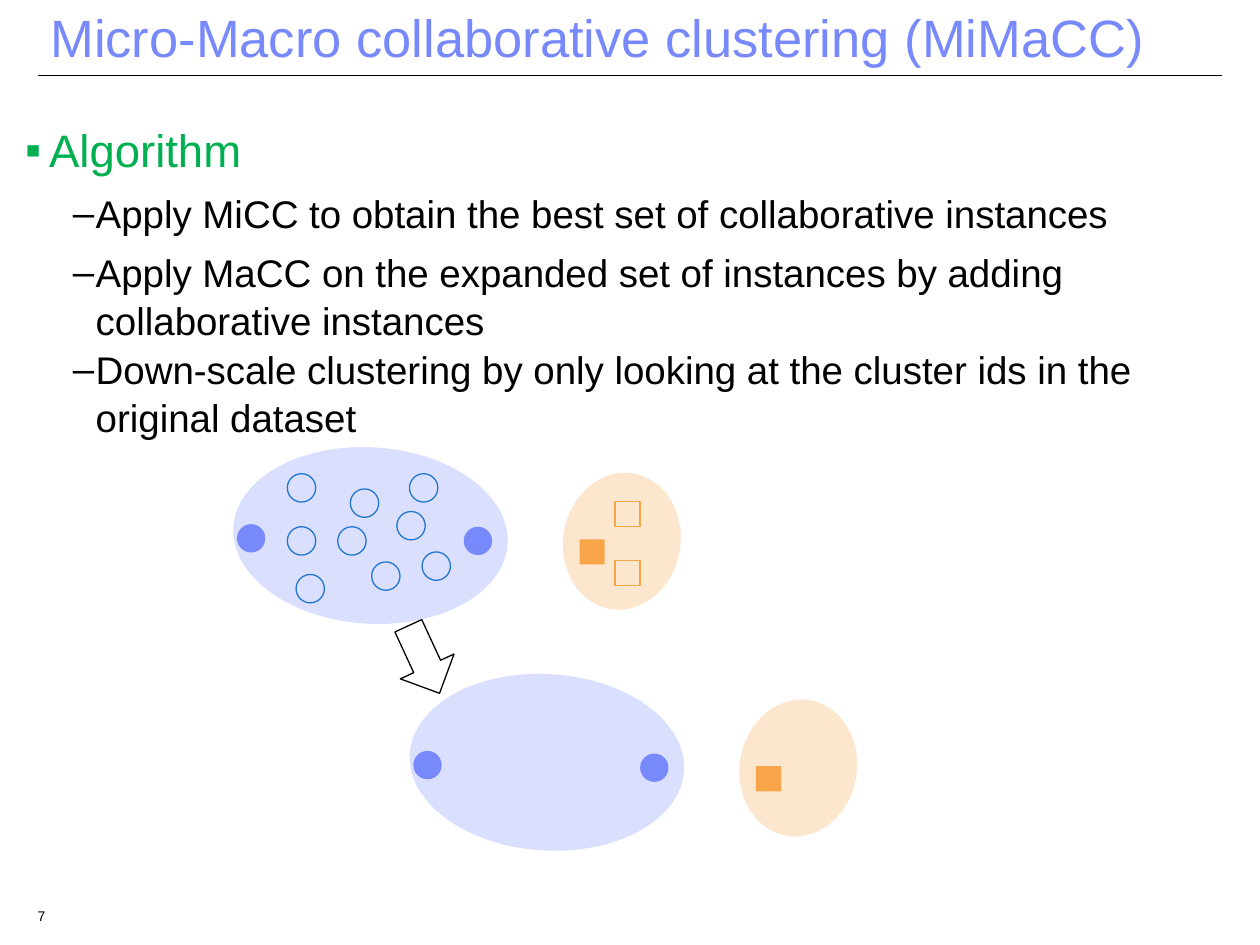
from lxml import etree
from pptx import Presentation
from pptx import util as u
from pptx.dml import color as col
from pptx.enum import shapes as sh, text as tx
from pptx.oxml import ns

Pt = u.Pt
HUES = {"blue": "7889FB", "orange": "F8A54A", "rim": "0070C0",
        "green": "00B050", "black": "000000"}
OVAL, RECT = sh.MSO_SHAPE.OVAL, sh.MSO_SHAPE.RECTANGLE
DOT, TILE = 16.2, 14.4

POINTS = [
    "Apply MiCC to obtain the best set of collaborative instances",
    "Apply MaCC on the expanded set of instances by adding collaborative instances",
    "Down-scale clustering by only looking at the cluster ids in the original dataset",
]
SOLID = [(OVAL, "blue", DOT, [(2.2, 43.9), (131.8, 45.4)]),
         (RECT, "orange", TILE, [(198, 52.6)])]
HOLLOW = [(OVAL, "rim", DOT, [(31, 15.1), (59.8, 45.4), (67, 23.8), (31, 45.4),
                              (79.2, 65.5), (93.6, 36.7), (100.8, 15.1),
                              (108, 59.8), (36, 72.7)]),
          (RECT, "orange", TILE, [(218.2, 64.8), (218.2, 31)])]
FIELDS = [("blue", (0, 0, 157, 100.8), 3.6),
          ("orange", (182.9, 20.2, 78.5, 67), 280.1)]


def rgb(hue):
    return col.RGBColor.from_string(HUES[hue])


def apply(item, values):
    for key, value in values.items():
        setattr(item, key, value)


def place(item, box):
    apply(item, dict(zip(("left", "top", "width", "height"), map(Pt, box))))


def write(para, words, size, hue):
    run = para.add_run()
    run.text = words
    apply(run.font, {"name": "Arial", "size": Pt(size)})
    run.font.color.rgb = rgb(hue)


def mark(para, sign, hue, left, hang):
    props = para._p.get_or_add_pPr()
    props.set("marL", str(Pt(left)))
    props.set("indent", str(-Pt(hang)))
    tint = etree.SubElement(props, ns.qn("a:buClr"))
    etree.SubElement(tint, ns.qn("a:srgbClr"), val=HUES[hue])
    etree.SubElement(props, ns.qn("a:buFont"), typeface="Arial")
    etree.SubElement(props, ns.qn("a:buChar"), char=sign)


def draw(parts, kind, box, fill=None, line=None, alpha=None, turn=0):
    item = parts.add_shape(kind, *map(Pt, box))
    item.shadow.inherit = False
    item.rotation = turn
    if fill:
        item.fill.solid()
        item.fill.fore_color.rgb = rgb(fill)
    else:
        item.fill.background()
    if line:
        item.line.color.rgb = rgb(line)
        item.line.width = Pt(0.75)
    else:
        item.line.fill.background()
    if alpha:
        tint = item._element.spPr.find(ns.qn("a:solidFill"))[0]
        etree.SubElement(tint, ns.qn("a:alpha"), val=str(alpha * 1000))
    return item


def header(slide, box):
    title = slide.shapes.title
    place(title, box)
    frame = title.text_frame
    apply(frame, {"vertical_anchor": tx.MSO_ANCHOR.TOP, "word_wrap": True,
                  "auto_size": tx.MSO_AUTO_SIZE.NONE})
    para = frame.paragraphs[0]
    apply(para, {"alignment": tx.PP_ALIGN.LEFT, "line_spacing": 0.9,
                 "space_before": Pt(0)})
    write(para, "Micro-Macro collaborative clustering (MiMaCC)", 30, "blue")
    left, top = box[:2]
    y = Pt(top + 39.6)
    rule = slide.shapes.add_connector(sh.MSO_CONNECTOR.STRAIGHT,
                                      Pt(left), y, Pt(left + 676.8), y)
    rule.line.color.rgb = rgb("black")
    rule.line.width = Pt(0.75)
    etree.SubElement(rule._element.spPr, ns.qn("a:effectLst"))


def steps(slide, box):
    body = slide.placeholders[1]
    place(body, box)
    frame = body.text_frame
    apply(frame, {"word_wrap": True, "auto_size": tx.MSO_AUTO_SIZE.NONE})
    head = frame.paragraphs[0]
    mark(head, "▪", "green", 13.7, 13.7)
    apply(head, {"space_before": Pt(0), "line_spacing": 1.05})
    write(head, "Algorithm", 26, "green")
    for words, gap in zip(POINTS, (6, 6, 0)):
        para = frame.add_paragraph()
        mark(para, "–", "black", 40.3, 13)
        apply(para, {"level": 1, "space_before": Pt(gap), "line_spacing": 1.05})
        write(para, words, 22, "black")


def scene(slide, box, full):
    left, top = box
    parts = slide.shapes.add_group_shape().shapes
    layers = [("fill", SOLID)] + ([("line", HOLLOW)] if full else [])
    for style, marks in layers:
        for kind, hue, size, spots in marks:
            for x, y in spots:
                draw(parts, kind, (left + x, top + y, size, size), **{style: hue})
    for hue, (x, y, wide, high), turn in FIELDS:
        draw(parts, OVAL, (left + x, top + y, wide, high),
             fill=hue, alpha=27, turn=turn)


def number(slide, box):
    note = slide.shapes.add_textbox(*map(Pt, box))
    note.text_frame.word_wrap = True
    write(note.text_frame.paragraphs[0], "7", 8, "black")


def main():
    deck = Presentation()
    apply(deck, {"slide_width": Pt(720), "slide_height": Pt(540)})
    slide = deck.slides.add_slide(deck.slide_layouts[1])
    header(slide, (21.6, 3.6, 684, 50.4))
    steps(slide, (7.2, 64.8, 712.8, 158.4))
    number(slide, (14.4, 514.8, 28.8, 14.4))
    scene(slide, (133.2, 255.6), True)
    scene(slide, (234, 385.2), False)
    draw(slide.shapes, sh.MSO_SHAPE.RIGHT_ARROW, (221, 360, 42.5, 33.8),
         line="black", turn=65.2)
    deck.save("out.pptx")


if __name__ == "__main__":
    main()
